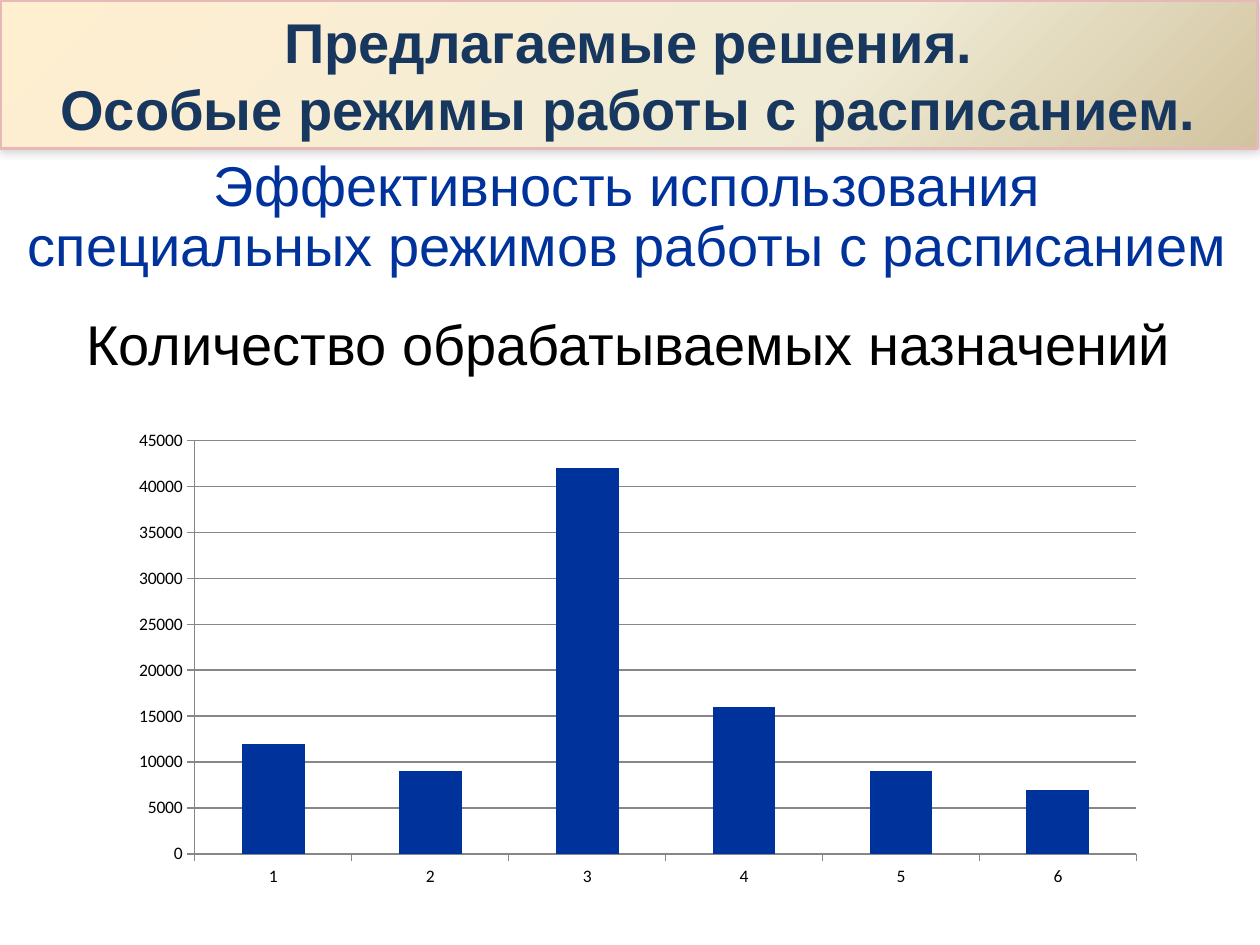
import copy

import pptx
import pptx.chart.data
import pptx.dml.color
import pptx.enum.chart
import pptx.enum.text
import pptx.oxml
import pptx.oxml.ns
import pptx.util
from pptx.util import Inches, Pt

COLORS = {"title": "17375E", "blue": "00329B", "black": "000000",
          "border": "E6B9B8", "axis": "878787"}
TITLE = "Предлагаемые решения.\vОсобые режимы работы с расписанием."
GRADIENT = [(0, "FFEFD1"), (0.65, "F0EBD5"), (1, "D1C39F")]
CAPTIONS = [
    (["Эффективность использования",
      "специальных режимов работы с расписанием"],
     "blue", (0.12, 1.23, 9.72, 1.02)),
    (["Количество обрабатываемых назначений"],
     "black", (0.13, 2.41, 9.72, 0.63)),
]
APPOINTMENTS = {"1": 12000, "2": 9000, "3": 42000,
                "4": 16000, "5": 9000, "6": 7000}
SHADOW = (
    '<a:effectLst xmlns:a="http://schemas.openxmlformats.org/drawingml/2006/main">'
    '<a:outerShdw blurRad="76200" dist="0" dir="18900000" rotWithShape="0">'
    '<a:srgbClr val="000000"><a:alpha val="20000"/></a:srgbClr>'
    '</a:outerShdw></a:effectLst>')
PLOT_AREA = (
    '<c:layout xmlns:c="http://schemas.openxmlformats.org/drawingml/2006/chart">'
    '<c:manualLayout><c:layoutTarget val="inner"/>'
    '<c:xMode val="edge"/><c:yMode val="edge"/>'
    '<c:x val="0.106"/><c:y val="0.075"/><c:w val="0.855"/><c:h val="0.833"/>'
    '</c:manualLayout></c:layout>')


def rgb(name):
    return pptx.dml.color.RGBColor.from_string(COLORS.get(name, name))


def set_font(font, size, name, color, bold=False):
    font.size, font.name, font.bold = Pt(size), name, bold
    font.color.rgb = rgb(color)


def place(sp, box):
    sp.left, sp.top, sp.width, sp.height = map(Inches, box)


def add_title(slide):
    sp = slide.shapes.title
    place(sp, (0, 0, 9.98, 1.18))
    sp.fill.gradient()
    sp.fill.gradient_angle = 315
    first = sp._element.spPr.find(".//" + pptx.oxml.ns.qn("a:gs"))
    first.addnext(copy.deepcopy(first))
    for stop, (position, color) in zip(sp.fill.gradient_stops, GRADIENT):
        stop.position = position
        stop.color.rgb = rgb(color)
    sp.line.color.rgb = rgb("border")
    sp.line.width = Pt(2)
    sp._element.spPr.append(pptx.oxml.parse_xml(SHADOW))
    tf = sp.text_frame
    tf.text = TITLE
    tf.auto_size = pptx.enum.text.MSO_AUTO_SIZE.NONE
    tf.vertical_anchor = pptx.enum.text.MSO_ANCHOR.MIDDLE
    p = tf.paragraphs[0]
    p.alignment = pptx.enum.text.PP_ALIGN.CENTER
    set_font(p.font, 32, "Arial", "title", True)


def add_caption(slide, lines, color, box):
    tf = slide.shapes.add_textbox(*map(Inches, box)).text_frame
    tf.word_wrap = True
    tf.margin_left = tf.margin_right = 0
    tf.vertical_anchor = pptx.enum.text.MSO_ANCHOR.BOTTOM
    tf.text = "\n".join(lines)
    for p in tf.paragraphs:
        p.alignment = pptx.enum.text.PP_ALIGN.CENTER
        p.line_spacing = Pt(34)
        set_font(p.font, 32, "Arial", color)


def add_appointments_chart(slide):
    data = pptx.chart.data.CategoryChartData()
    data.categories = list(APPOINTMENTS)
    data.add_series("Series 1", list(APPOINTMENTS.values()))
    chart = slide.shapes.add_chart(
        pptx.enum.chart.XL_CHART_TYPE.COLUMN_CLUSTERED,
        *map(Inches, (0.62, 3.2, 8.74, 3.94)), data).chart
    chart.has_legend = chart.has_title = False
    set_font(chart.font, 10, "Calibri", "black")

    plot = chart.plots[0]
    plot.vary_by_categories = False
    plot.gap_width = 150
    fill = plot.series[0].format.fill
    fill.solid()
    fill.fore_color.rgb = rgb("blue")

    values = chart.value_axis
    values.minimum_scale, values.maximum_scale, values.major_unit = 0, 45000, 5000
    values.has_major_gridlines = True
    for part in (chart.category_axis, values, values.major_gridlines):
        part.format.line.color.rgb = rgb("axis")
        part.format.line.width = Pt(0.75)
    for axis in (chart.category_axis, values):
        axis.major_tick_mark = pptx.enum.chart.XL_TICK_MARK.OUTSIDE

    area = chart._chartSpace.chart.plotArea
    for layout in area.findall(pptx.oxml.ns.qn("c:layout")):
        area.remove(layout)
    area.insert(0, pptx.oxml.parse_xml(PLOT_AREA))


def main():
    prs = pptx.Presentation()
    prs.slide_width, prs.slide_height = Inches(10), Inches(7.5)
    slide = prs.slides.add_slide(prs.slide_layouts[5])
    add_title(slide)
    add_appointments_chart(slide)
    for lines, color, box in CAPTIONS:
        add_caption(slide, lines, color, box)
    prs.save("out.pptx")


if __name__ == "__main__":
    main()
